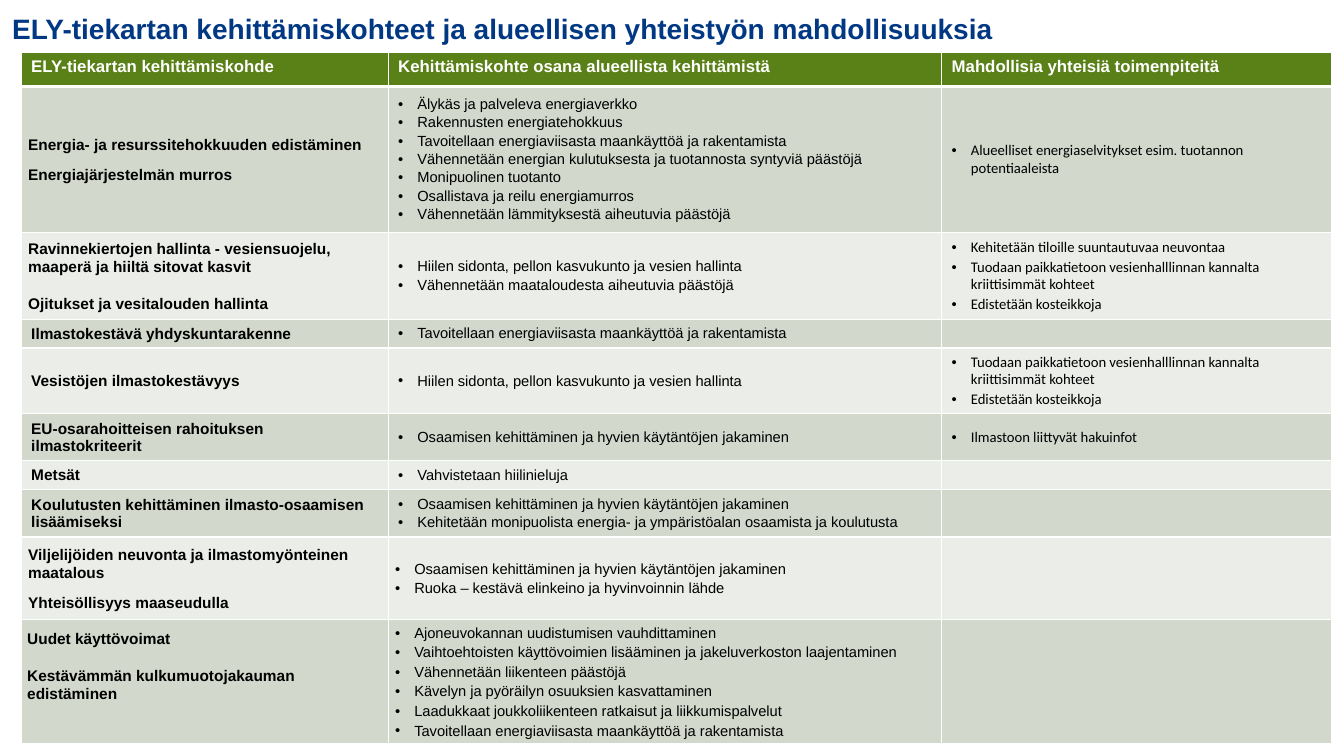
from dataclasses import dataclass

from pptx import Presentation
from pptx.dml.color import RGBColor
from pptx.enum.text import MSO_ANCHOR
from pptx.oxml.xmlchemy import OxmlElement
from pptx.util import Inches, Pt

WHITE = RGBColor(0xFF, 0xFF, 0xFF)
BLACK = RGBColor(0x00, 0x00, 0x00)
NAVY = RGBColor(0x00, 0x38, 0x83)
HEADER_GREEN = RGBColor(0x5A, 0x81, 0x17)
BANDS = (RGBColor(0xD2, 0xD8, 0xCC), RGBColor(0xEA, 0xED, 0xE8))

SLIDE_WIDTH, SLIDE_HEIGHT = Inches(13.33), Inches(7.5)
TABLE_WIDTH = Inches(13)
COLUMN_PERCENTS = (28, 42.23, 29.77)  # of the table width
HEADER_PERCENT = 4.5  # of the slide height, as are the row heights
BULLET_INDENT = Inches(0.19)


@dataclass(frozen=True)
class Style:
    size: float
    name: str = "Arial"
    bold: bool = False
    color: RGBColor = BLACK
    line_spacing: float = 1.0
    space_after: float = 0
    bulleted: bool = False
    side_margin: float = 0.1
    top_margin: float = 0.05
    bottom_margin: float = 0.05


TITLE = Style(20, bold=True, color=NAVY, line_spacing=0.9,
              side_margin=0, top_margin=0, bottom_margin=0)
HEADER = Style(12, bold=True, color=WHITE)
TOPIC = Style(11, bold=True)
PAIRED_TOPIC = Style(11, bold=True, line_spacing=1.07, space_after=8,
                     side_margin=0.07, top_margin=0, bottom_margin=0)
SPACED_TOPIC = Style(11, bold=True, line_spacing=1.07, space_after=13,
                     side_margin=0.07, top_margin=0, bottom_margin=0)
RAISED_TOPIC = Style(11, bold=True, line_spacing=1.07, space_after=13,
                     side_margin=0.06, top_margin=0, bottom_margin=0.3)
AIM = Style(10.5, space_after=1.5, bulleted=True)
LOOSE_AIM = Style(10.5, line_spacing=1.07, space_after=1.5, bulleted=True,
                  side_margin=0.07, top_margin=0, bottom_margin=0)
ACTION = Style(10.5, name="Calibri", space_after=1.5, bulleted=True)


@dataclass(frozen=True)
class Row:
    height_percent: float
    topics: tuple[str, ...]
    aims: tuple[str, ...]
    actions: tuple[str, ...] = ()
    topic_style: Style = TOPIC
    aim_style: Style = AIM


# Wording that several rows share
LAND_USE = "Tavoitellaan energiaviisasta maankäyttöä ja rakentamista"
CARBON = "Hiilen sidonta, pellon kasvukunto ja vesien hallinta"
SKILLS = "Osaamisen kehittäminen ja hyvien käytäntöjen jakaminen"
WATER_ACTIONS = (
    "Tuodaan paikkatietoon vesienhalllinnan kannalta kriittisimmät kohteet",
    "Edistetään kosteikkoja",
)

HEADINGS = (
    "ELY-tiekartan kehittämiskohde",
    "Kehittämiskohte osana alueellista kehittämistä",
    "Mahdollisia yhteisiä toimenpiteitä",
)
ROWS = (
    Row(18.7,
        ("Energia- ja resurssitehokkuuden edistäminen", "Energiajärjestelmän murros"),
        ("Älykäs ja palveleva energiaverkko",
         "Rakennusten energiatehokkuus",
         LAND_USE,
         "Vähennetään energian kulutuksesta ja tuotannosta syntyviä päästöjä",
         "Monipuolinen tuotanto",
         "Osallistava ja reilu energiamurros",
         "Vähennetään lämmityksestä aiheutuvia päästöjä"),
        ("Alueelliset energiaselvitykset esim. tuotannon potentiaaleista",),
        topic_style=PAIRED_TOPIC),
    Row(11.5,
        ("Ravinnekiertojen hallinta - vesiensuojelu, maaperä ja hiiltä sitovat kasvit",
         "Ojitukset ja vesitalouden hallinta"),
        (CARBON, "Vähennetään maataloudesta aiheutuvia päästöjä"),
        ("Kehitetään tiloille suuntautuvaa neuvontaa", *WATER_ACTIONS),
        topic_style=SPACED_TOPIC),
    Row(3.7, ("Ilmastokestävä yhdyskuntarakenne",), (LAND_USE,)),
    Row(8.7, ("Vesistöjen ilmastokestävyys",), (CARBON,), WATER_ACTIONS),
    Row(5.85, ("EU-osarahoitteisen rahoituksen ilmastokriteerit",), (SKILLS,),
        ("Ilmastoon liittyvät hakuinfot",)),
    Row(3.7, ("Metsät",), ("Vahvistetaan hiilinieluja",)),
    Row(5.95, ("Koulutusten kehittäminen ilmasto-osaamisen lisäämiseksi",),
        (SKILLS,
         "Kehitetään monipuolista energia- ja ympäristöalan osaamista ja koulutusta")),
    Row(10.95,
        ("Viljelijöiden neuvonta ja ilmastomyönteinen maatalous",
         "Yhteisöllisyys maaseudulla"),
        (SKILLS, "Ruoka – kestävä elinkeino ja hyvinvoinnin lähde"),
        topic_style=PAIRED_TOPIC, aim_style=LOOSE_AIM),
    Row(15.6,
        ("Uudet käyttövoimat", "Kestävämmän kulkumuotojakauman edistäminen"),
        ("Ajoneuvokannan uudistumisen vauhdittaminen",
         "Vaihtoehtoisten käyttövoimien lisääminen ja jakeluverkoston laajentaminen",
         "Vähennetään liikenteen päästöjä",
         "Kävelyn ja pyöräilyn osuuksien kasvattaminen",
         "Laadukkaat joukkoliikenteen ratkaisut ja liikkumispalvelut",
         LAND_USE),
        topic_style=RAISED_TOPIC, aim_style=LOOSE_AIM),
)


def set_attributes(target, values: dict) -> None:
    for attribute, value in values.items():
        setattr(target, attribute, value)


def margins(style: Style) -> dict:
    return {
        "margin_left": Inches(style.side_margin),
        "margin_right": Inches(style.side_margin),
        "margin_top": Inches(style.top_margin),
        "margin_bottom": Inches(style.bottom_margin),
    }


def add_bullet(paragraph) -> None:
    properties = paragraph._p.get_or_add_pPr()
    properties.set("marL", str(BULLET_INDENT))
    properties.set("indent", str(-BULLET_INDENT))
    for tag, key, value in (("a:buFont", "typeface", "Arial"), ("a:buChar", "char", "•")):
        element = OxmlElement(tag)
        element.set(key, value)
        properties.append(element)


def write_paragraphs(text_frame, texts: tuple[str, ...], style: Style) -> None:
    for index, text in enumerate(texts):
        paragraph = text_frame.add_paragraph() if index else text_frame.paragraphs[0]
        if style.bulleted:
            add_bullet(paragraph)
        set_attributes(paragraph, {"line_spacing": style.line_spacing,
                                   "space_after": Pt(style.space_after)})
        run = paragraph.add_run()
        run.text = text
        set_attributes(run.font, {"size": Pt(style.size), "name": style.name,
                                  "bold": style.bold})
        run.font.color.rgb = style.color
    if not texts:  # keep an empty cell from stretching its row
        end_properties = OxmlElement("a:endParaRPr")
        end_properties.set("sz", str(int(style.size * 100)))
        text_frame.paragraphs[0]._p.append(end_properties)


def add_borders(cell, bottom_width: float) -> None:
    properties = cell._tc.get_or_add_tcPr()
    for side, width in (("L", 1), ("R", 1), ("T", 1), ("B", bottom_width)):
        line = OxmlElement(f"a:ln{side}")
        line.set("w", str(Pt(width)))
        fill, color = OxmlElement("a:solidFill"), OxmlElement("a:srgbClr")
        color.set("val", str(WHITE))
        fill.append(color)
        line.append(fill)
        properties.append(line)


def fill_cell(cell, texts: tuple[str, ...], style: Style, color: RGBColor,
              anchor: MSO_ANCHOR = MSO_ANCHOR.MIDDLE, bottom_width: float = 1) -> None:
    set_attributes(cell, {**margins(style), "vertical_anchor": anchor})
    add_borders(cell, bottom_width)
    cell.fill.solid()
    cell.fill.fore_color.rgb = color
    write_paragraphs(cell.text_frame, texts, style)


def add_title(slide) -> None:
    box = slide.shapes.add_textbox(Inches(0.12), 0, Inches(11.63), Inches(0.6))
    set_attributes(box.text_frame, {**margins(TITLE), "word_wrap": True,
                                    "vertical_anchor": MSO_ANCHOR.MIDDLE})
    write_paragraphs(
        box.text_frame,
        ("ELY-tiekartan kehittämiskohteet ja alueellisen yhteistyön mahdollisuuksia",),
        TITLE)


def add_roadmap_table(slide) -> None:
    heights = [int(SLIDE_HEIGHT * percent / 100)
               for percent in (HEADER_PERCENT, *(row.height_percent for row in ROWS))]
    table = slide.shapes.add_table(len(heights), len(HEADINGS), Inches(0.21),
                                   Inches(0.52), TABLE_WIDTH, sum(heights)).table
    for column, percent in zip(table.columns, COLUMN_PERCENTS):
        column.width = int(TABLE_WIDTH * percent / 100)
    for table_row, height in zip(table.rows, heights):
        table_row.height = height

    # Header row, then the banded body
    for column, heading in enumerate(HEADINGS):
        fill_cell(table.cell(0, column), (heading,), HEADER, HEADER_GREEN,
                  MSO_ANCHOR.TOP, bottom_width=3)
    for index, row in enumerate(ROWS):
        contents = ((row.topics, row.topic_style), (row.aims, row.aim_style),
                    (row.actions, ACTION))
        for column, (texts, style) in enumerate(contents):
            fill_cell(table.cell(index + 1, column), texts, style, BANDS[index % 2])


def main() -> None:
    presentation = Presentation()
    set_attributes(presentation, {"slide_width": SLIDE_WIDTH, "slide_height": SLIDE_HEIGHT})
    slide = presentation.slides.add_slide(presentation.slide_layouts[6])
    add_title(slide)
    add_roadmap_table(slide)
    presentation.save("out.pptx")


if __name__ == "__main__":
    main()
